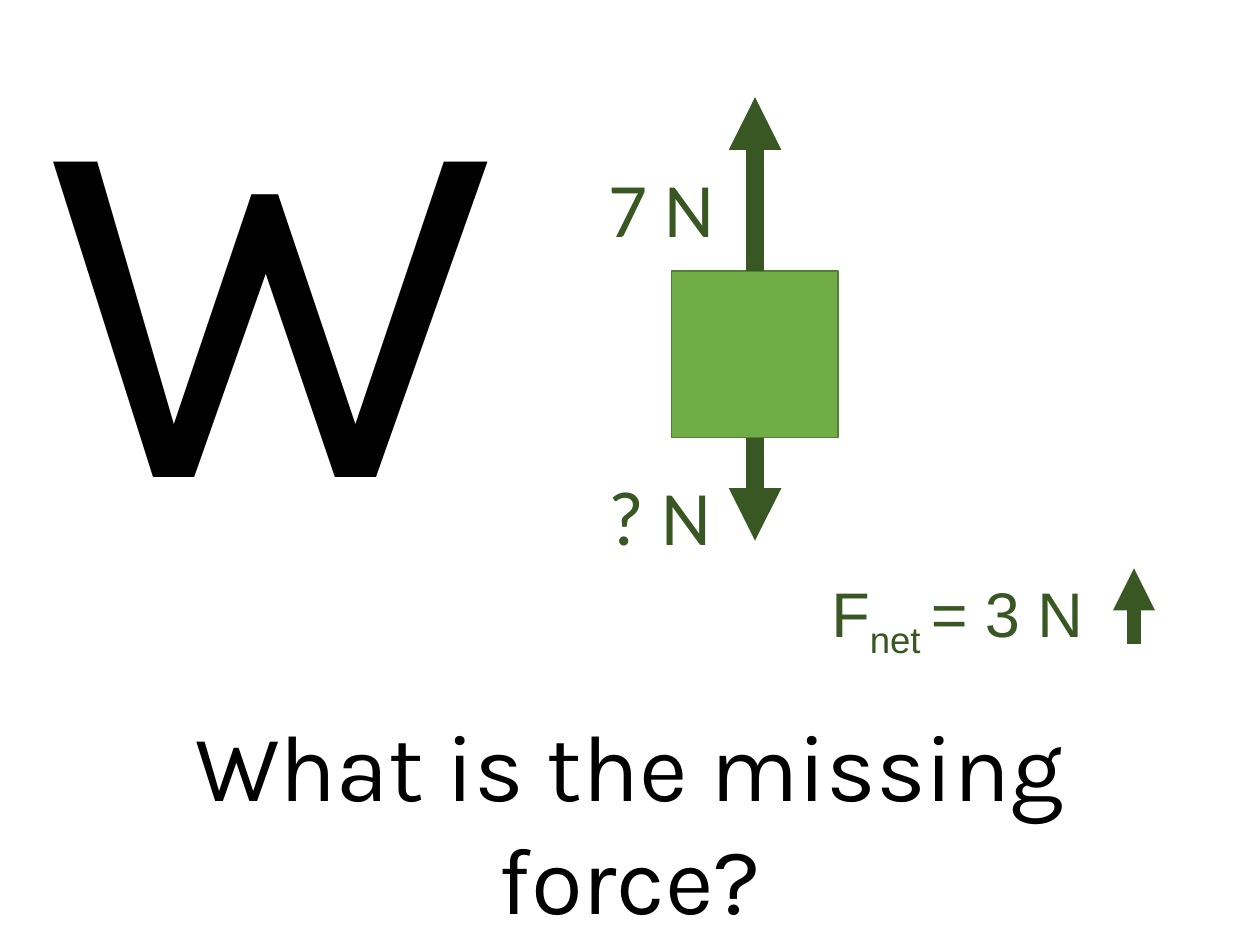
"""Build a slide that asks for the missing force on a box."""
from dataclasses import dataclass

from lxml import etree
from pptx import Presentation
from pptx.dml.color import RGBColor
from pptx.enum.shapes import MSO_CONNECTOR, MSO_SHAPE
from pptx.enum.text import MSO_ANCHOR, MSO_AUTO_SIZE, PP_ALIGN
from pptx.oxml.ns import qn
from pptx.shapes.autoshape import Shape
from pptx.shapes.connector import Connector
from pptx.slide import Slide
from pptx.util import Cm, Pt

STRAIGHT = MSO_CONNECTOR.STRAIGHT
RECTANGLE = MSO_SHAPE.RECTANGLE
TOP, BOTTOM = MSO_ANCHOR.TOP, MSO_ANCHOR.BOTTOM
FIT_SHAPE, NO_FIT = MSO_AUTO_SIZE.SHAPE_TO_FIT_TEXT, MSO_AUTO_SIZE.NONE
LEFT, CENTER = PP_ALIGN.LEFT, PP_ALIGN.CENTER

BLACK = RGBColor(0x00, 0x00, 0x00)
DARK_GREEN = RGBColor(0x38, 0x57, 0x23)
BOX_GREEN = RGBColor(0x70, 0xAD, 0x47)
EDGE_GREEN = RGBColor(0x53, 0x80, 0x35)

BOX_LEFT, BOX_TOP, BOX_SIDE = 13.54, 5.46, 3.36
BOX_MIDDLE = BOX_LEFT + BOX_SIDE / 2
TOP_SITE, BOTTOM_SITE = 0, 2
SUBSCRIPT = "-25000"


@dataclass(frozen=True)
class Label:
    left: float
    top: float
    width: float
    height: float
    runs: tuple[str, ...]
    size: float
    font: str
    color: RGBColor = DARK_GREEN
    alignment: PP_ALIGN = LEFT
    wrap: bool = False
    anchor: MSO_ANCHOR = TOP
    fit: MSO_AUTO_SIZE = FIT_SHAPE
    line_spacing: float = 1.0


@dataclass(frozen=True)
class Arrow:
    x: float
    start: float
    end: float
    weight: float
    box_site: int | None = None


LETTER = Label(0.69, 0.99, 8.84, 10.95, ("W",), 287, "Karla", BLACK, CENTER,
               True, BOTTOM, NO_FIT, 0.9)
QUESTION = Label(1.27, 14.12, 22.86, 2.57, ("What is the missing force?",),
                 54, "Karla", BLACK, CENTER, True)
UP_FORCE = Label(12.01, 3.12, 2.67, 2.13, ("7 N",), 44, "Calibri")
DOWN_FORCE = Label(12.01, 9.32, 2.59, 2.13, ("? N",), 44, "Calibri")
NET_FORCE = Label(16.51, 11.46, 5.82, 1.8, ("F", "net ", "= 3 N"), 36, "Arial")

ARROWS = (
    Arrow(22.86, 12.98, 11.46, 8),
    Arrow(BOX_MIDDLE, BOX_TOP + BOX_SIDE, 10.9, 10, BOTTOM_SITE),
    Arrow(BOX_MIDDLE, BOX_TOP, 1.96, 10, TOP_SITE),
)


def add_label(slide: Slide, label: Label) -> Shape:
    """Add a text box and return it."""
    shape = slide.shapes.add_textbox(
        Cm(label.left), Cm(label.top), Cm(label.width), Cm(label.height))
    frame = shape.text_frame
    frame.word_wrap = label.wrap
    frame.auto_size = label.fit
    frame.vertical_anchor = label.anchor
    paragraph = frame.paragraphs[0]
    paragraph.alignment = label.alignment
    paragraph.line_spacing = label.line_spacing
    paragraph.font.name = label.font
    paragraph.font.size = Pt(label.size)
    paragraph.font.color.rgb = label.color
    for text in label.runs:
        paragraph.add_run().text = text
    return shape


def add_box(slide: Slide) -> Shape:
    """Add the square that the forces act on."""
    box = slide.shapes.add_shape(
        RECTANGLE, Cm(BOX_LEFT), Cm(BOX_TOP), Cm(BOX_SIDE), Cm(BOX_SIDE))
    box.shadow.inherit = False
    box.fill.solid()
    box.fill.fore_color.rgb = BOX_GREEN
    box.line.color.rgb = EDGE_GREEN
    box.line.width = Pt(1)
    return box


def add_arrow(slide: Slide, arrow: Arrow, box: Shape) -> Connector:
    """Add a vertical force arrow, joined to the box where it starts there."""
    connector = slide.shapes.add_connector(
        STRAIGHT, Cm(arrow.x), Cm(arrow.start), Cm(arrow.x), Cm(arrow.end))
    if arrow.box_site is not None:
        connector.begin_connect(box, arrow.box_site)
    connector.line.color.rgb = DARK_GREEN
    connector.line.width = Pt(arrow.weight)
    line = connector.line._get_or_add_ln()
    etree.SubElement(line, qn("a:tailEnd"), type="triangle")
    etree.SubElement(connector._element.spPr, qn("a:effectLst"))
    return connector


def main() -> None:
    """Build and save the presentation."""
    presentation = Presentation()
    presentation.slide_width, presentation.slide_height = Cm(25.4), Cm(19.05)
    slide = presentation.slides.add_slide(presentation.slide_layouts[6])
    for label in (LETTER, QUESTION, UP_FORCE, DOWN_FORCE):
        add_label(slide, label)
    box = add_box(slide)
    net_force = add_label(slide, NET_FORCE)
    subscript = net_force.text_frame.paragraphs[0].runs[1]
    subscript.font._element.set("baseline", SUBSCRIPT)
    for arrow in ARROWS:
        add_arrow(slide, arrow, box)
    presentation.save("out.pptx")


if __name__ == "__main__":
    main()
